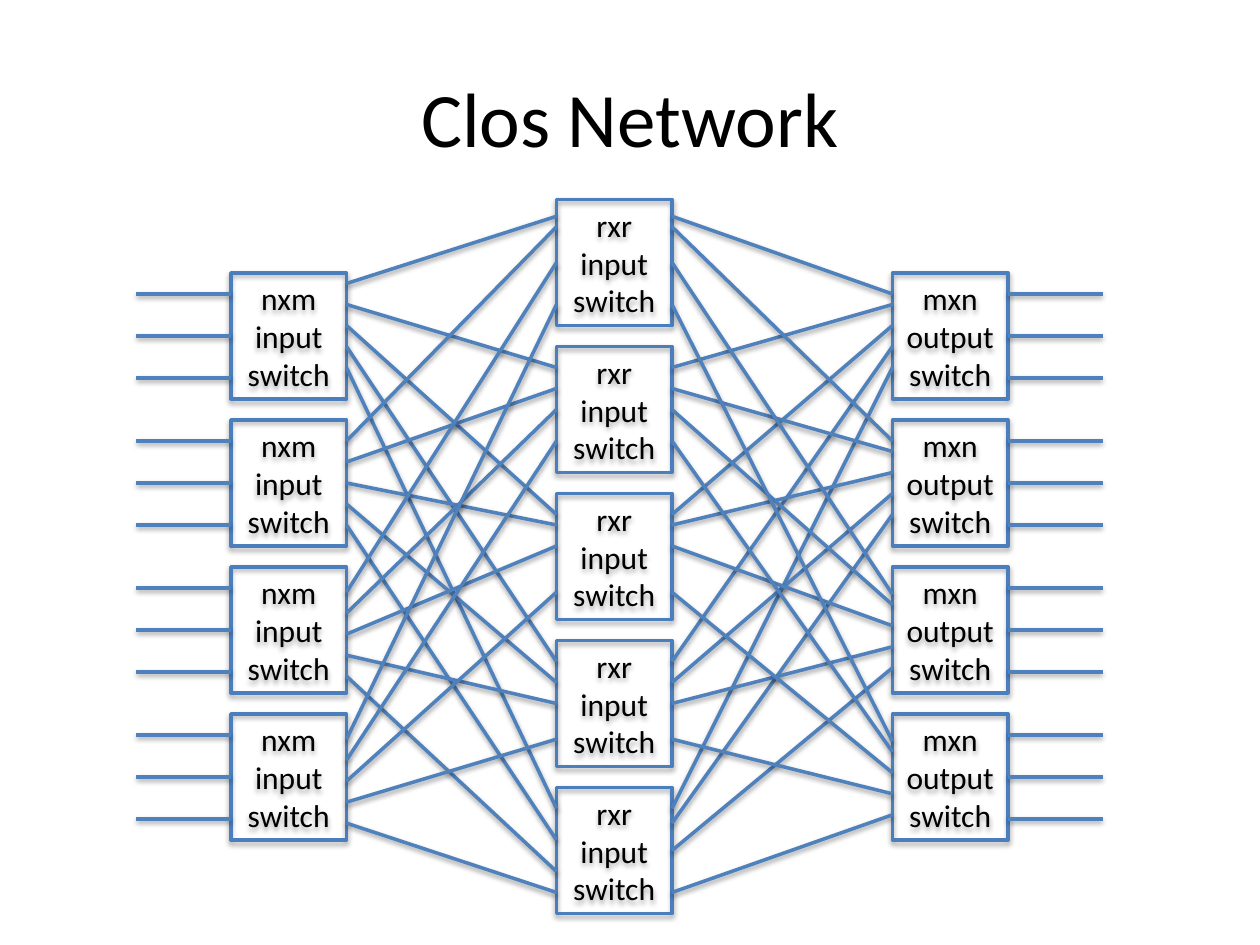
from dataclasses import dataclass
from typing import Any

from lxml import etree
from pptx import Presentation
from pptx import util as u
from pptx.dml.color import RGBColor
from pptx.enum import shapes, text
from pptx.oxml import ns

BLACK = RGBColor(0x00, 0x00, 0x00)
BOX_BLUE = RGBColor(0x4B, 0x7E, 0xBC)
LINE_BLUE = RGBColor(0x4F, 0x81, 0xBD)
FONT = "Calibri"
BOX_WIDTH, BOX_HEIGHT, PITCH = 66, 72, 84
STUB_LENGTH, STUB_STEP, STUBS = 54, 24, 3
PORT_STEP = 12


@dataclass(frozen=True)
class Stage:
    label: str
    left: float
    top: float
    count: int

    @property
    def right(self) -> float:
        return self.left + BOX_WIDTH

    def box_top(self, index: int) -> float:
        return self.top + index * PITCH


@dataclass(frozen=True)
class Shadow:
    opacity: int
    distance: float
    blur: float = 3.1


INPUTS = Stage("nxm input switch", 132, 156, 4)
MIDDLES = Stage("rxr input switch", 318, 114, 5)
OUTPUTS = Stage("mxn output switch", 510, 156, 4)

BOX_SHADOW = Shadow(35, 1.8)
LINE_SHADOW = Shadow(38, 1.6)

INPUT_FIRST_PORTS = (6, 12, 14.4, 14.4)
OUTPUT_FIRST_PORTS = (12, 12, 15.6, 15.6)
MIDDLE_LEFT_PORTS = (
    (9.6, 15.6, 36, 60),
    (12, 24, 36, 54),
    (12, 18, 30, 56.4),
    (12, 24, 36, 56.4),
    (12, 30, 48, 60),
)
MIDDLE_RIGHT_PORTS = MIDDLE_LEFT_PORTS[:-1] + ((12, 20.4, 36, 60),)


def add_shadow(item: Any, shadow: Shadow) -> None:
    properties = item._element.spPr
    for old in properties.findall(ns.qn("a:effectLst")):
        properties.remove(old)
    effects = etree.SubElement(properties, ns.qn("a:effectLst"))
    outer = etree.SubElement(
        effects,
        ns.qn("a:outerShdw"),
        blurRad=str(u.Pt(shadow.blur)),
        dist=str(u.Pt(shadow.distance)),
        dir="5400000",
        rotWithShape="0",
    )
    color = etree.SubElement(outer, ns.qn("a:srgbClr"), val=str(BLACK))
    etree.SubElement(color, ns.qn("a:alpha"), val=str(shadow.opacity * 1000))


def add_stage(page: Any, stage: Stage) -> None:
    for index in range(stage.count):
        box = page.shapes.add_shape(
            shapes.MSO_SHAPE.RECTANGLE,
            u.Pt(stage.left),
            u.Pt(stage.box_top(index)),
            u.Pt(BOX_WIDTH),
            u.Pt(BOX_HEIGHT),
        )
        box.fill.background()
        box.line.color.rgb = BOX_BLUE
        box.line.width = u.Pt(2)
        add_shadow(box, BOX_SHADOW)
        frame = box.text_frame
        frame.word_wrap = True
        frame.vertical_anchor = text.MSO_ANCHOR.MIDDLE
        para = frame.paragraphs[0]
        para.text = stage.label
        para.alignment = text.PP_ALIGN.CENTER
        para.font.size = u.Pt(18)
        para.font.name = FONT
        para.font.color.rgb = BLACK


def add_link(page: Any, x1: float, y1: float, x2: float, y2: float) -> None:
    link = page.shapes.add_connector(
        shapes.MSO_CONNECTOR.STRAIGHT, u.Pt(x1), u.Pt(y1), u.Pt(x2), u.Pt(y2)
    )
    link.line.color.rgb = LINE_BLUE
    link.line.width = u.Pt(2)
    add_shadow(link, LINE_SHADOW)


def add_input_links(page: Any) -> None:
    for source, first in enumerate(INPUT_FIRST_PORTS):
        for middle, ports in enumerate(MIDDLE_LEFT_PORTS):
            start = INPUTS.box_top(source) + first + middle * PORT_STEP
            end = MIDDLES.box_top(middle) + ports[source]
            add_link(page, INPUTS.right, start, MIDDLES.left, end)


def add_output_links(page: Any) -> None:
    for target, first in enumerate(OUTPUT_FIRST_PORTS):
        for middle, ports in enumerate(MIDDLE_RIGHT_PORTS):
            start = MIDDLES.box_top(middle) + ports[target]
            port = first + max(0, middle * PORT_STEP - PORT_STEP / 2)
            end = OUTPUTS.box_top(target) + port
            add_link(page, MIDDLES.right, start, OUTPUTS.left, end)


def add_stubs(page: Any, stage: Stage, edge: float, outer: float) -> None:
    for index in range(stage.count):
        for stub in range(STUBS):
            y = stage.box_top(index) + PORT_STEP + stub * STUB_STEP
            add_link(page, edge, y, outer, y)


def add_title(page: Any) -> None:
    title = page.shapes.title
    title.left, title.top = u.Pt(36), u.Pt(21.6)
    title.width, title.height = u.Pt(648), u.Pt(90)
    title.text_frame.vertical_anchor = text.MSO_ANCHOR.MIDDLE
    para = title.text_frame.paragraphs[0]
    para.text = "Clos Network"
    para.alignment = text.PP_ALIGN.CENTER
    para.font.size = u.Pt(44)
    para.font.name = FONT
    para.font.color.rgb = BLACK


def main() -> None:
    deck = Presentation()
    deck.slide_width, deck.slide_height = u.Pt(720), u.Pt(540)
    page = deck.slides.add_slide(deck.slide_layouts.get_by_name("Title Only"))
    add_title(page)
    for stage in (INPUTS, MIDDLES, OUTPUTS):
        add_stage(page, stage)
    add_input_links(page)
    add_output_links(page)
    add_stubs(page, INPUTS, INPUTS.left, INPUTS.left - STUB_LENGTH)
    add_stubs(page, OUTPUTS, OUTPUTS.right, OUTPUTS.right + STUB_LENGTH)
    deck.save("out.pptx")


if __name__ == "__main__":
    main()
